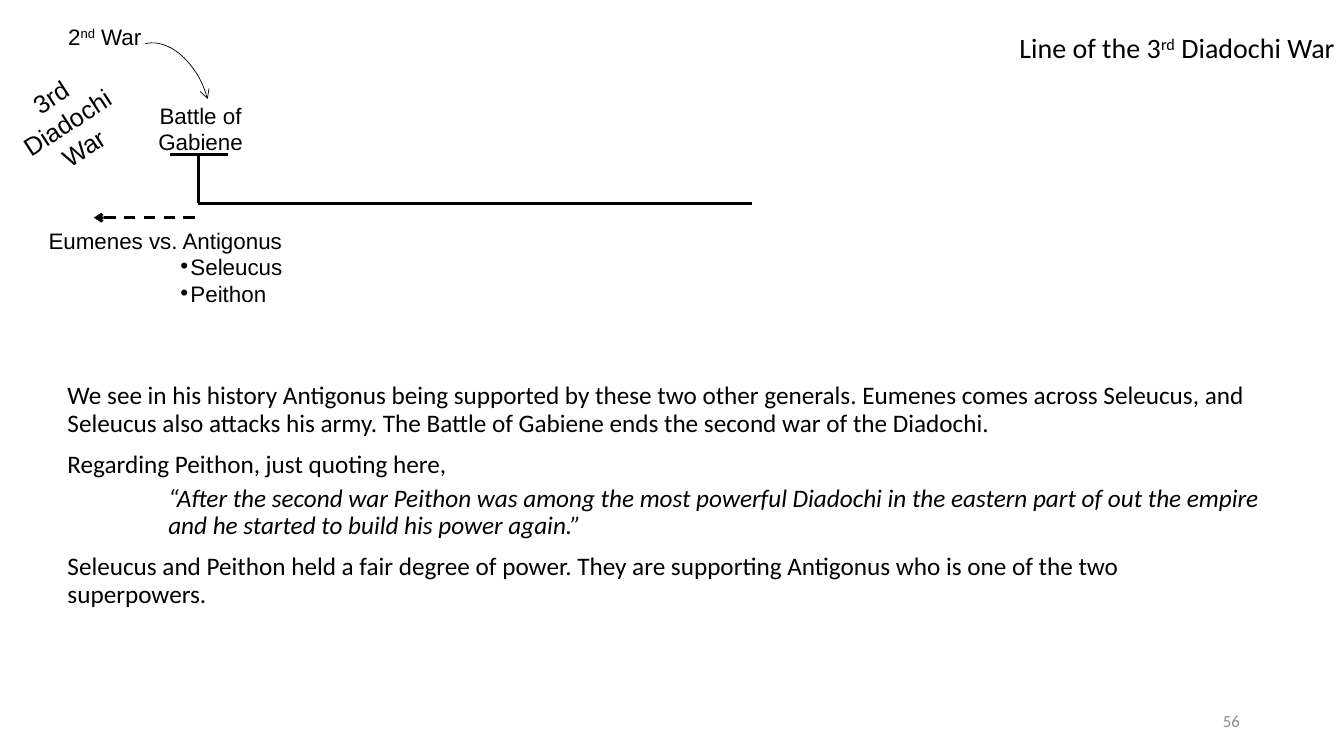
"""Build the slide on the line of the 3rd Diadochi War."""
from dataclasses import dataclass

from lxml.etree import SubElement
from pptx import Presentation
from pptx.dml.color import RGBColor
from pptx.enum.dml import MSO_LINE
from pptx.enum.shapes import MSO_CONNECTOR, MSO_SHAPE
from pptx.enum.text import MSO_ANCHOR as ANCHOR, MSO_AUTO_SIZE, PP_ALIGN as ALIGN
from pptx.oxml.ns import qn
from pptx.util import Pt

BLACK, GREY = "000000", "8C8C8C"


@dataclass
class Run:
    text: str
    raised: bool = False


@dataclass
class Para:
    runs: list[Run]
    align: ALIGN = ALIGN.LEFT
    level: int = 0
    margin: float = 0
    indent: float = 0
    bullet: str = ""
    before: float = 0
    spacing: float = 1.0
    italic: bool = False


@dataclass
class Style:
    size: float
    font: str = "Arial"
    color: str = BLACK
    inset: tuple[float, float] = (2.9, 2.9)
    anchor: ANCHOR = ANCHOR.TOP


@dataclass
class Label:
    box: tuple[float, float, float, float]
    paras: list[Para]
    style: Style
    rotation: float = 0


@dataclass
class Line:
    start: tuple[float, float]
    end: tuple[float, float]
    arrow: bool = False


def rgb(color: str) -> RGBColor:
    """Turn a hex string into a colour."""
    return RGBColor.from_string(color)


def place(sp, box: tuple[float, float, float, float]) -> None:
    """Move and size a shape."""
    sp.left, sp.top, sp.width, sp.height = (Pt(v) for v in box)


def write(sp, paras: list[Para], style: Style) -> None:
    """Fill a shape's text frame run by run."""
    tf = sp.text_frame
    tf.word_wrap = True
    tf.auto_size = MSO_AUTO_SIZE.NONE
    tf.vertical_anchor = style.anchor
    tf.margin_left = tf.margin_right = Pt(style.inset[0])
    tf.margin_top = tf.margin_bottom = Pt(style.inset[1])
    for i, para in enumerate(paras):
        p = tf.add_paragraph() if i else tf.paragraphs[0]
        pPr = p._p.get_or_add_pPr()
        pPr.set("marL", str(Pt(para.margin)))
        pPr.set("indent", str(Pt(para.indent)))
        if para.bullet:
            SubElement(pPr, qn("a:buFont"), typeface="Arial")
            SubElement(pPr, qn("a:buChar"), char=para.bullet)
        else:
            SubElement(pPr, qn("a:buNone"))
        p.level, p.alignment = para.level, para.align
        p.line_spacing = para.spacing
        p.space_before, p.space_after = Pt(para.before), Pt(0)
        for run in para.runs:
            r = p.add_run()
            r.text = run.text
            r.font.size, r.font.name = Pt(style.size), style.font
            r.font.italic = para.italic
            r.font.color.rgb = rgb(style.color)
            if run.raised:
                r._r.get_or_add_rPr().set("baseline", "30000")


def add_label(shapes, label: Label) -> None:
    """Add a text box."""
    sp = shapes.add_textbox(*(Pt(v) for v in label.box))
    sp.rotation = label.rotation
    write(sp, label.paras, label.style)


def stroke(sp, width: float, arrow: bool) -> None:
    """Draw a black line, with an arrowhead at its end if asked."""
    sp.line.color.rgb = rgb(BLACK)
    sp.line.width = Pt(width)
    if arrow:
        SubElement(sp.line._get_or_add_ln(), qn("a:tailEnd"), type="arrow")


def add_line(shapes, line: Line) -> None:
    """Add a straight line; an arrow is dashed."""
    cx = shapes.add_connector(MSO_CONNECTOR.STRAIGHT, *(Pt(v) for v in line.start + line.end))
    if line.arrow:
        cx.line.dash_style = MSO_LINE.DASH
    stroke(cx, 2, line.arrow)
    SubElement(cx._element.spPr, qn("a:effectLst"))


def centred(*runs: Run) -> list[Para]:
    """Make one centred paragraph."""
    return [Para(list(runs), ALIGN.CENTER)]


TITLE = [Para([Run("Line of the 3"), Run("rd", True), Run(" Diadochi War")],
              ALIGN.RIGHT, spacing=0.9)]
BODY = [
    Para([Run("We see in his history Antigonus being supported by these two other generals. "
              "Eumenes comes across Seleucus, and Seleucus also attacks his army. "
              "The Battle of Gabiene ends the second war of the Diadochi.")], spacing=0.9),
    Para([Run("Regarding Peithon, just quoting here,")], before=10, spacing=0.9),
    Para([Run("“After the second war Peithon was among the most powerful Diadochi in the "
              "eastern part of out the empire and he started to build his power again.”")],
         level=2, margin=72, before=5, spacing=0.9, italic=True),
    Para([Run("Seleucus and Peithon held a fair degree of power. They are supporting "
              "Antigonus who is one of the two superpowers.")], before=10, spacing=0.9),
]
ALLIES = [Para([Run(name)], margin=7.2, indent=-7.2, bullet="•")
          for name in ("Seleucus", "Peithon")]

NOTE = Style(16)
WIDE = (7.2, 3.6)
LABELS = [
    Label((676.8, 500.4, 216, 28.8), [Para([Run("56")], ALIGN.RIGHT)],
          Style(12, "Calibri", GREY, WIDE, ANCHOR.MIDDLE)),
    Label((107.3, 69.8, 72, 43.2), centred(Run("Battle of Gabiene")), NOTE),
    Label((8.6, 51.8, 79.2, 72), centred(Run("3rd Diadochi War")), Style(18), 327.1),
    Label((28.1, 159.1, 180, 28.8), centred(Run("Eumenes vs. Antigonus")), NOTE),
    Label((126, 177.8, 79.2, 43.2), ALLIES, NOTE),
    Label((42.5, 13.7, 64.8, 21.6), centred(Run("2"), Run("nd", True), Run(" War")), NOTE),
]
TIMELINE = [Line((141.1, 145.4), (537.1, 145.4)),
            Line((139, 155.5), (67, 155.5), arrow=True)]
BATTLE_MARK = [Line((162.7, 110.2), (121.7, 110.2)),
               Line((141.8, 110.2), (141.8, 144.7))]


def main() -> None:
    """Build and save the slide."""
    prs = Presentation()
    prs.slide_width, prs.slide_height = Pt(960), Pt(540)
    slide = prs.slides.add_slide(prs.slide_layouts[1])
    shapes = slide.shapes
    title, body = shapes.title, slide.placeholders[1]
    place(title, (0.7, 17.3, 959.8, 36))
    write(title, TITLE, Style(20, "Calibri", BLACK, WIDE, ANCHOR.MIDDLE))
    place(body, (41, 270, 867.6, 247.7))
    write(body, BODY, Style(18, "Calibri", BLACK, WIDE))
    for line in TIMELINE:
        add_line(shapes, line)
    mark = shapes.add_group_shape()
    for line in BATTLE_MARK:
        add_line(mark.shapes, line)
    for label in LABELS:
        add_label(shapes, label)
    arc = shapes.add_shape(MSO_SHAPE.ARC, Pt(83.5), Pt(29.5), Pt(66.2), Pt(100.8))
    arc.adjustments[0], arc.adjustments[1] = 162.88, 0
    arc.rotation = 343.9
    arc.shadow.inherit = False
    arc.fill.background()
    stroke(arc, 0.5, arrow=True)
    prs.save("out.pptx")


if __name__ == "__main__":
    main()
